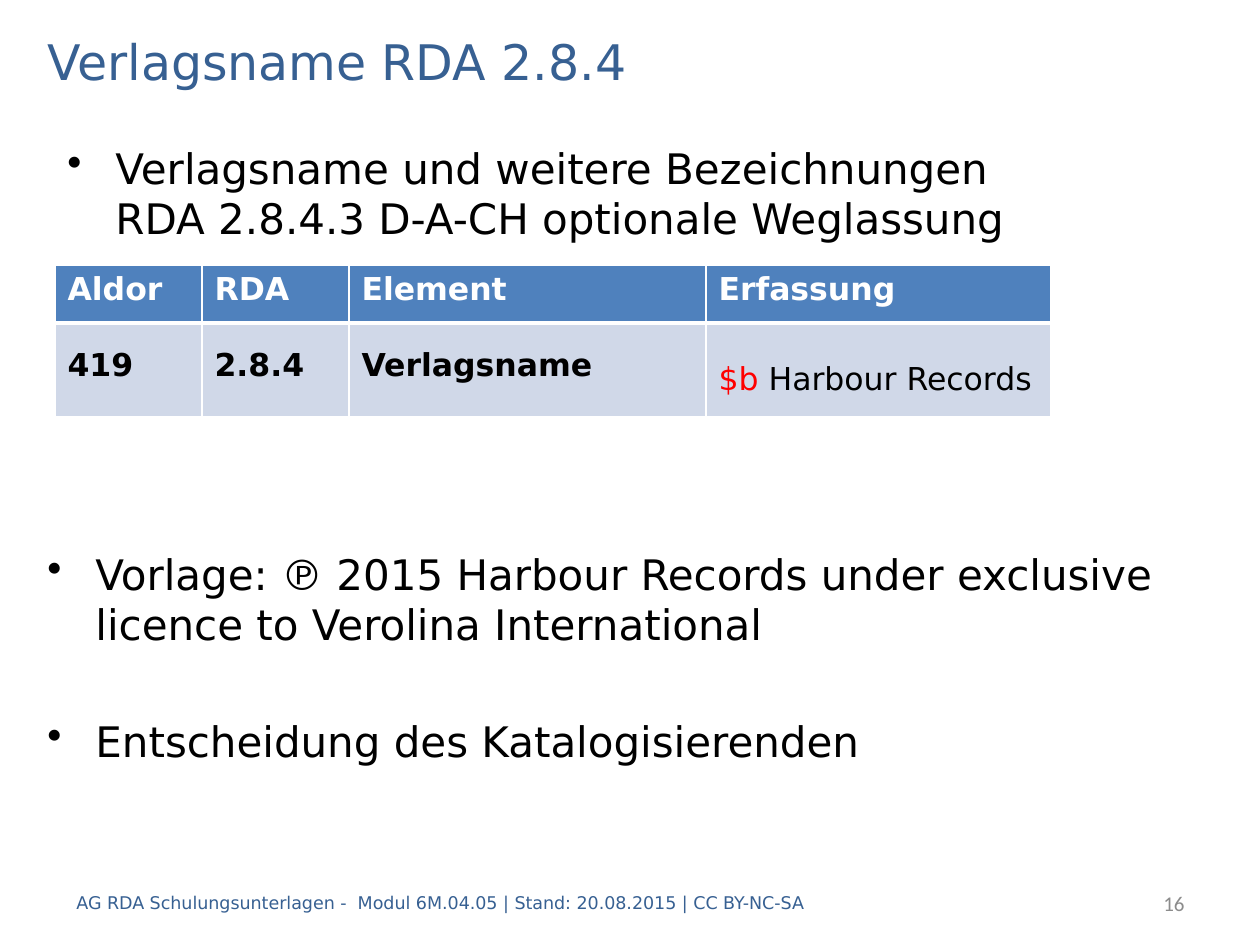
import pptx
import pptx.util
import pptx.dml.color
import pptx.enum.text
import pptx.oxml
import lxml.etree

TITLE = "Verlagsname RDA 2.8.4"
INTRO = ["Verlagsname und weitere Bezeichnungen\nRDA 2.8.4.3 D-A-CH optionale Weglassung"]
NOTES = [
    "Vorlage: ℗ 2015 Harbour Records under exclusive licence to Verolina International",
    "Entscheidung des Katalogisierenden",
]
FOOTER = "AG RDA Schulungsunterlagen -  Modul 6M.04.05 | Stand: 20.08.2015 | CC BY-NC-SA"
NUMBER = "16"
HEAD = ["Aldor", "RDA", "Element", "Erfassung"]
ENTRY = ["419", "2.8.4", "Verlagsname"]
CODE, VALUE = "$b ", "Harbour Records"

# Lengths in px, 126 to the inch
COLS = [147, 147, 357, 345]
ROWS = [58, 94]
BOX = {
    "title": (35, 25, 1191, 71),
    "intro": (55, 136, 1191, 89),
    "table": (55, 265, sum(COLS), sum(ROWS)),
    "notes": (35, 542, 1191, 287),
    "footer": (64, 878, 1052, 50),
    "number": (997, 878, 200, 50),
}
INDENT = 48

THEME = {
    "font": "DejaVu Sans", "plain": "Calibri",
    "title": 28, "body": 24, "cell": 18, "number": 12, "footer": 10,
    "blue": "376092", "black": "000000", "white": "FFFFFF", "red": "FF0000",
    "gray": "8C8C8C", "head": "4F81BD", "row": "D0D8E8",
}
Pt = pptx.util.Pt
Align = pptx.enum.text.PP_ALIGN
Anchor = pptx.enum.text.MSO_ANCHOR


def px(n):
    return round(n * 914400 / 126)


def place(name):
    return [px(n) for n in BOX[name]]


def color(name):
    return pptx.dml.color.RGBColor.from_string(THEME[name])


def style(para, size, tone, face="font", bold=False):
    font = para.font
    font.name, font.size, font.bold = THEME[face], Pt(THEME[size]), bold
    font.color.rgb = color(tone)


def add_box(slide, name):
    frame = slide.shapes.add_textbox(*place(name)).text_frame
    frame.word_wrap = True
    return frame


def add_list(slide, name, items, gap):
    """Bulleted text with gap points between its items."""
    frame = add_box(slide, name)
    for i, item in enumerate(items):
        para = frame.add_paragraph() if i else frame.paragraphs[0]
        para.text = item
        para.space_before = Pt(gap if i else 4.8)
        style(para, "body", "black")
        props = para._p.get_or_add_pPr()
        props.set("marL", str(px(INDENT)))
        props.set("indent", str(-px(INDENT)))
        mark = lxml.etree.Element(pptx.oxml.ns.qn("a:buChar"), char="•")
        props.insert_element_before(mark, "a:tabLst", "a:defRPr", "a:extLst")


def add_line(slide, name, text, size, tone, face="font", align=Align.LEFT):
    frame = add_box(slide, name)
    frame.vertical_anchor = Anchor.MIDDLE
    para = frame.paragraphs[0]
    para.text, para.alignment = text, align
    style(para, size, tone, face)


def edge(cell, widths):
    """White borders; widths in points for left, right, top, bottom."""
    props = cell._tc.get_or_add_tcPr()
    for i, (side, width) in enumerate(zip("LRTB", widths)):
        props.insert(i, pptx.oxml.parse_xml(
            f'<a:ln{side} {pptx.oxml.ns.nsdecls("a")} w="{Pt(width)}"><a:solidFill>'
            f'<a:srgbClr val="{THEME["white"]}"/></a:solidFill></a:ln{side}>'))


def paint(cell, fill, widths):
    cell.fill.solid()
    cell.fill.fore_color.rgb = color(fill)
    edge(cell, widths)


def add_grid(slide):
    grid = slide.shapes.add_table(2, len(COLS), *place("table")).table
    for col, width in zip(grid.columns, COLS):
        col.width = px(width)
    for row, height in zip(grid.rows, ROWS):
        row.height = px(height)
    for i, text in enumerate(HEAD):
        cell = grid.cell(0, i)
        cell.text = text
        style(cell.text_frame.paragraphs[0], "cell", "white", bold=True)
        paint(cell, "head", (1, 1, 1, 3))
    for i, text in enumerate(ENTRY + [CODE]):
        cell = grid.cell(1, i)
        cell.text = text
        cell.vertical_anchor = Anchor.MIDDLE
        para = cell.text_frame.paragraphs[0]
        last = i == len(ENTRY)
        para.space_before = para.space_after = Pt(6)
        para.line_spacing = 1.5 if last else Pt(16)
        style(para, "cell", "black", bold=not last)
        if last:
            para.runs[0].font.color.rgb = color("red")
            para.add_run().text = VALUE
        paint(cell, "row", (1, 1, 3, 1))


def main():
    deck = pptx.Presentation()
    deck.slide_width, deck.slide_height = px(1260), px(945)
    slide = deck.slides.add_slide(deck.slide_layouts[5])
    title = slide.shapes.title
    title.left, title.top, title.width, title.height = place("title")
    title.text_frame.text = TITLE
    title.text_frame.vertical_anchor = Anchor.MIDDLE
    para = title.text_frame.paragraphs[0]
    para.alignment = Align.LEFT
    style(para, "title", "blue")
    add_list(slide, "notes", NOTES, 38)
    add_line(slide, "footer", FOOTER, "footer", "blue")
    add_line(slide, "number", NUMBER, "number", "gray", "plain", Align.RIGHT)
    add_list(slide, "intro", INTRO, 0)
    add_grid(slide)
    deck.save("out.pptx")


if __name__ == "__main__":
    main()
